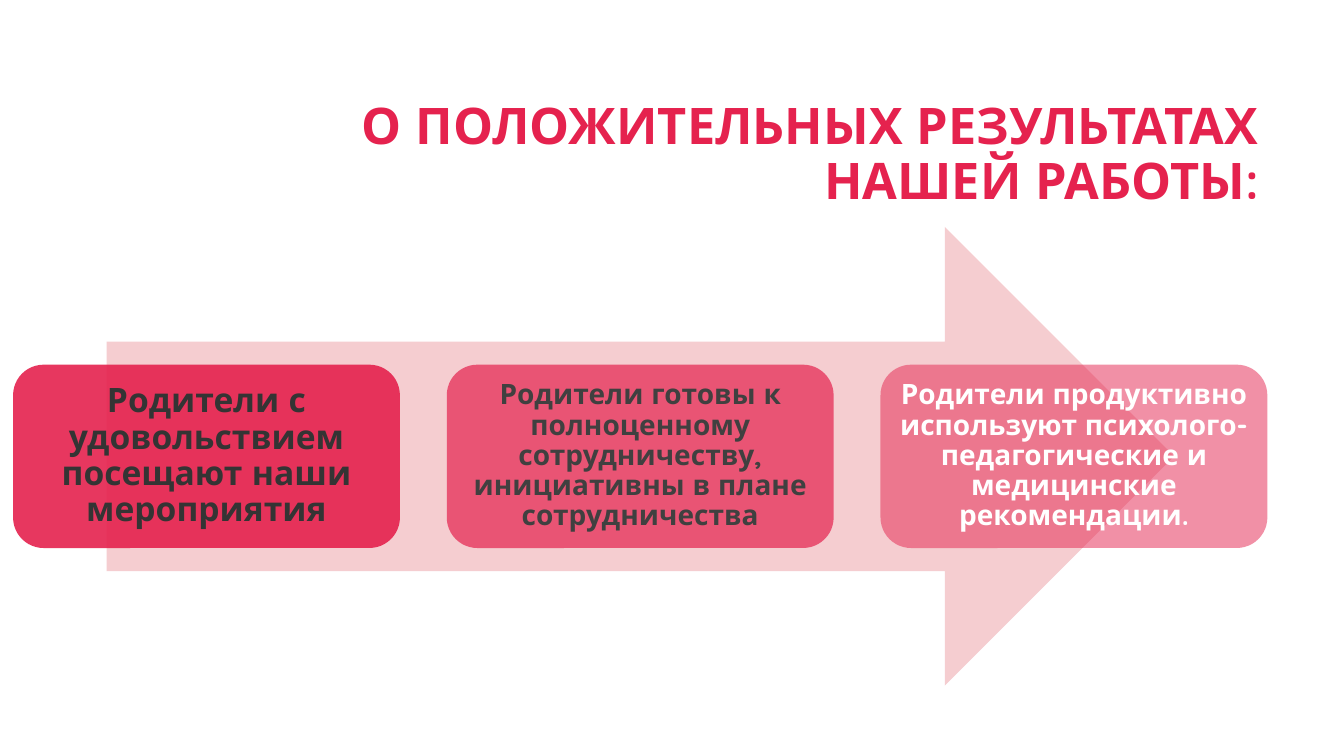
import pptx
import pptx.dml.color
import pptx.enum.shapes
import pptx.enum.text
import pptx.oxml.ns
import pptx.util
from lxml import etree

Cm = pptx.util.Cm
RGBColor = pptx.dml.color.RGBColor
Align = pptx.enum.text.PP_ALIGN
Shape = pptx.enum.shapes.MSO_SHAPE

# Content
CRIMSON = RGBColor(0xE5, 0x22, 0x4E)
PALE_PINK = RGBColor(0xF5, 0xCD, 0xD0)
CHARCOAL = RGBColor(0x34, 0x34, 0x34)
GRAPHITE = RGBColor(0x40, 0x40, 0x40)
WHITE = RGBColor(0xFF, 0xFF, 0xFF)
FONT = "Quicksand"

TITLE = "О ПОЛОЖИТЕЛЬНЫХ РЕЗУЛЬТАТАХ НАШЕЙ РАБОТЫ:"
# Text, size, text colour, fill opacity in percent, margin in cm
RESULTS = [
    ("Родители с удовольствием посещают наши мероприятия",
     24, CHARCOAL, 90, 0.25),
    ("Родители готовы к полноценному сотрудничеству, инициативны в плане сотрудничества",
     20, GRAPHITE, 70, 0.2),
    ("Родители продуктивно используют психолого-педагогические и медицинские рекомендации.",
     20, WHITE, 50, 0.2),
]

# Card row, in cm
CARD_LEFT, CARD_TOP = 0.33, 9.19
CARD_WIDTH, CARD_HEIGHT = 9.75, 4.62
CARD_STEP = 10.93


def write(box, text, size, color, align):
    frame = box.text_frame
    frame.text = text
    frame.word_wrap = True
    frame.auto_size = pptx.enum.text.MSO_AUTO_SIZE.NONE
    frame.vertical_anchor = pptx.enum.text.MSO_ANCHOR.MIDDLE
    para = frame.paragraphs[0]
    para.alignment = align
    para.line_spacing = 0.9
    font = para.runs[0].font
    font.name = FONT
    font.size = pptx.util.Pt(size)
    font.bold = True
    font.color.rgb = color


def add_block(kind, left, top, width, height, color, opacity=100):
    block = page.shapes.add_shape(kind, Cm(left), Cm(top), Cm(width), Cm(height))
    block.shadow.inherit = False
    block.line.fill.background()
    block.fill.solid()
    block.fill.fore_color.rgb = color
    if opacity < 100:
        tint = block.fill._xPr.find(".//" + pptx.oxml.ns.qn("a:srgbClr"))
        etree.SubElement(tint, pptx.oxml.ns.qn("a:alpha"), val=str(opacity * 1000))
    return block


deck = pptx.Presentation()
deck.slide_width, deck.slide_height = Cm(33.87), Cm(19.05)
page = deck.slides.add_slide(deck.slide_layouts[5])

# Title
title = page.shapes.title
title.left, title.top, title.width, title.height = Cm(8.05), Cm(2.13), Cm(23.93), Cm(3.58)
write(title, TITLE, 36, CRIMSON, Align.RIGHT)

# Arrow behind the cards
add_block(Shape.RIGHT_ARROW, 2.69, 5.72, 26.9, 11.56, PALE_PINK)

# Result cards
for index, (text, size, color, opacity, margin) in enumerate(RESULTS):
    card = add_block(Shape.ROUNDED_RECTANGLE, CARD_LEFT + index * CARD_STEP, CARD_TOP,
                     CARD_WIDTH, CARD_HEIGHT, CRIMSON, opacity)
    write(card, text, size, color, Align.CENTER)
    frame = card.text_frame
    frame.margin_left = frame.margin_right = Cm(margin)
    frame.margin_top = frame.margin_bottom = Cm(margin)

deck.save("out.pptx")
